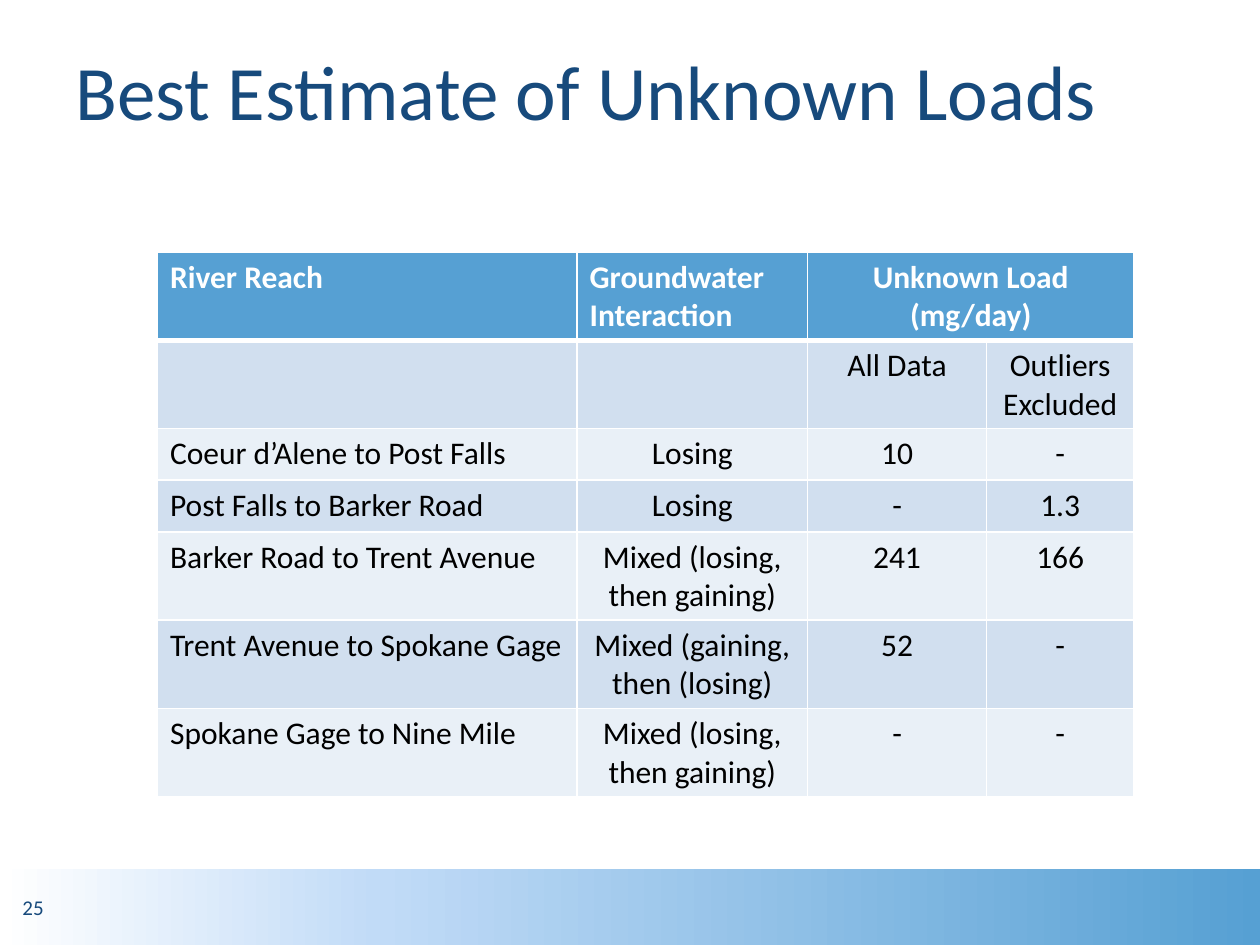
from dataclasses import dataclass

from lxml import etree
from pptx import Presentation
from pptx.dml.color import RGBColor
from pptx.enum.shapes import MSO_SHAPE
from pptx.enum.text import MSO_ANCHOR, PP_ALIGN
from pptx.oxml import parse_xml
from pptx.oxml.ns import nsdecls, qn
from pptx.util import Inches, Pt


@dataclass(frozen=True)
class Theme:
    font: str = "Calibri"
    title_size: int = 44
    table_size: int = 18
    number_size: int = 12
    navy: str = "174A7C"
    blue: str = "56A0D3"
    pale_blue: str = "C1DBF7"
    dark_band: str = "D1DFEF"
    light_band: str = "E9F0F7"
    white: str = "FFFFFF"
    black: str = "000000"
    rule: int = 1
    header_rule: int = 3


THEME = Theme()
SLIDE_WIDTH, SLIDE_HEIGHT = 10, 7.5

HEADER = ["River Reach", "Groundwater Interaction", "Unknown Load (mg/day)", ""]
REACHES = [
    ["", "", "All Data", "Outliers Excluded"],
    ["Coeur d’Alene to Post Falls", "Losing", "10", "-"],
    ["Post Falls to Barker Road", "Losing", "-", "1.3"],
    ["Barker Road to Trent Avenue", "Mixed (losing, then gaining)", "241", "166"],
    ["Trent Avenue to Spokane Gage", "Mixed (gaining, then (losing)", "52", "-"],
    ["Spokane Gage to Nine Mile", "Mixed (losing, then gaining)", "-", "-"],
]
COLUMN_WIDTHS = [3.33, 1.83, 1.42, 1.17]
ONE_LINE, TWO_LINES = 0.41, 0.7
ROW_HEIGHTS = [TWO_LINES] * 2 + [ONE_LINE] * 2 + [TWO_LINES] * 3


def style_paragraph(paragraph, size, color, bold=False, align=PP_ALIGN.LEFT):
    paragraph.alignment = align
    font = paragraph.font
    font.name, font.size, font.bold = THEME.font, Pt(size), bold
    font.color.rgb = RGBColor.from_string(color)


def add_label(slide, box, text, size, anchor):
    frame = slide.shapes.add_textbox(*map(Inches, box)).text_frame
    frame.word_wrap = True
    frame.vertical_anchor = anchor
    frame.text = text
    style_paragraph(frame.paragraphs[0], size, THEME.navy)


def add_footer(slide, box, number):
    left, top, width, height = box
    # Gradient band
    band = slide.shapes.add_shape(MSO_SHAPE.RECTANGLE, *map(Inches, box))
    band.shadow.inherit = False
    band.line.fill.background()
    band.fill.gradient()
    band.fill.gradient_angle = 0
    stops = band._element.spPr.find(".//" + qn("a:gsLst"))
    for stop in list(stops):
        stops.remove(stop)
    for share, color in [(0, THEME.white), (30, THEME.pale_blue), (100, THEME.blue)]:
        stop = etree.SubElement(stops, qn("a:gs"), pos=str(share * 1000))
        etree.SubElement(stop, qn("a:srgbClr"), val=color)
    # Slide number
    number_box = (left + 0.08, top + height / 6, width * 0.23, height * 2 / 3)
    add_label(slide, number_box, number, THEME.number_size, MSO_ANCHOR.MIDDLE)


def set_borders(cell, top, bottom):
    properties = cell._tc.get_or_add_tcPr()
    for side, points in zip("LRTB", (THEME.rule, THEME.rule, top, bottom)):
        properties.append(parse_xml(
            f'<a:ln{side} {nsdecls("a")} w="{Pt(points)}"><a:solidFill>'
            f'<a:srgbClr val="{THEME.white}"/></a:solidFill></a:ln{side}>'))


def add_load_table(slide, left, top):
    rows = [HEADER] + REACHES
    table = slide.shapes.add_table(
        len(rows), len(COLUMN_WIDTHS), Inches(left), Inches(top),
        Inches(sum(COLUMN_WIDTHS)), Inches(sum(ROW_HEIGHTS))).table
    for column, width in zip(table.columns, COLUMN_WIDTHS):
        column.width = Inches(width)
    for row, height in zip(table.rows, ROW_HEIGHTS):
        row.height = Inches(height)
    table.cell(0, 2).merge(table.cell(0, 3))

    for r, texts in enumerate(rows):
        is_header = r == 0
        band = THEME.dark_band if r % 2 else THEME.light_band
        for c, text in enumerate(texts):
            cell = table.cell(r, c)
            set_borders(cell,
                        top=THEME.header_rule if r == 1 else THEME.rule,
                        bottom=THEME.header_rule if is_header else THEME.rule)
            cell.fill.solid()
            cell.fill.fore_color.rgb = RGBColor.from_string(
                THEME.blue if is_header else band)
            cell.text = text
            starts_left = c == 0 or (is_header and c == 1)
            style_paragraph(
                cell.text_frame.paragraphs[0], THEME.table_size,
                THEME.white if is_header else THEME.black, bold=is_header,
                align=PP_ALIGN.LEFT if starts_left else PP_ALIGN.CENTER)


def main():
    deck = Presentation()
    deck.slide_width, deck.slide_height = Inches(SLIDE_WIDTH), Inches(SLIDE_HEIGHT)
    slide = deck.slides.add_slide(deck.slide_layouts[6])
    footer_height = SLIDE_HEIGHT * 0.08
    add_footer(slide, (0, SLIDE_HEIGHT - footer_height, SLIDE_WIDTH, footer_height), "25")
    add_label(slide, (0.5, 0.3, SLIDE_WIDTH * 0.9, 1.25),
              "Best Estimate of Unknown Loads", THEME.title_size, MSO_ANCHOR.TOP)
    add_load_table(slide, left=1.25, top=2)
    deck.save("out.pptx")


if __name__ == "__main__":
    main()
